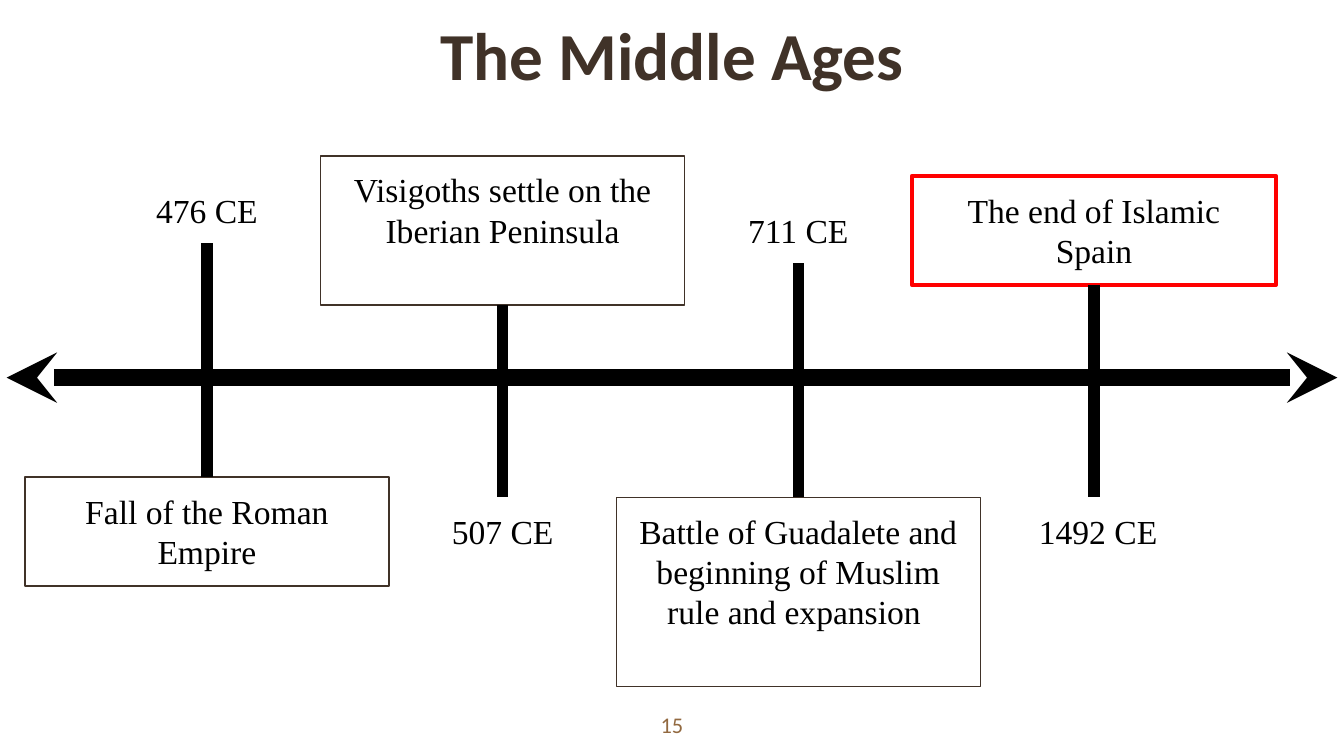
import pptx
import pptx.util
import pptx.dml.color
import pptx.enum.shapes
import pptx.enum.text
import pptx.oxml.ns
from lxml import etree

Inches = pptx.util.Inches
Pt = pptx.util.Pt

COLOURS = {"brown": "403228", "tan": "926940", "black": "000000", "red": "FF0000"}
SERIF = "Times New Roman"
SANS = "Calibri"

FIRST_CENTRE, EVENT_STEP = 1.54, 2.2
EVENT_WIDTH, DATE_HEIGHT = 2.71, 0.5

# date, date top, date width, event, event top, event height, outline, outline width
EVENTS = [
    ("476 CE", 1.31, 1.23, "Fall of the Roman Empire", 3.55, 0.81, "brown", 0.75),
    ("507 CE", 3.7, 1.23, "Visigoths settle on the Iberian Peninsula", 1.16, 1.11, "brown", 0.75),
    ("711 CE", 1.46, 1.23, "Battle of Guadalete and beginning of Muslim rule and expansion ",
     3.7, 1.41, "brown", 0.75),
    (" 1492 CE", 3.7, 1.46, "The end of Islamic Spain", 1.31, 0.81, "red", 2.25),
]


def rgb(name):
    return pptx.dml.color.RGBColor.from_string(COLOURS[name])


def write(shape, text, size, font, colour, bold=False, side_inset=0.1):
    """Fill a shape with one centred paragraph, starting at the top."""
    frame = shape.text_frame
    frame.text = text
    frame.word_wrap = True
    frame.auto_size = pptx.enum.text.MSO_AUTO_SIZE.NONE
    frame.vertical_anchor = pptx.enum.text.MSO_ANCHOR.TOP
    frame.margin_left = frame.margin_right = Inches(side_inset)
    frame.margin_top = frame.margin_bottom = Inches(0.1)
    paragraph = frame.paragraphs[0]
    paragraph.alignment = pptx.enum.text.PP_ALIGN.CENTER
    paragraph.space_before = Pt(0)
    run_font = paragraph.runs[0].font
    run_font.name, run_font.size, run_font.bold = font, Pt(size), bold
    run_font.color.rgb = rgb(colour)


def add_title(slide, text):
    title = slide.shapes.title
    title.left, title.top = Inches(2.3), Inches(0)
    title.width, title.height = Inches(5.4), Inches(0.84)
    write(title, text, 36, SANS, "brown", bold=True)


def add_page_number(slide, number):
    page = slide.shapes.add_textbox(Inches(4.7), Inches(5.19), Inches(0.6), Inches(0.43))
    write(page, number, 12, SANS, "tan")


def add_line(slide, start, end, width):
    line = slide.shapes.add_connector(
        pptx.enum.shapes.MSO_CONNECTOR.STRAIGHT, *map(Inches, start + end))
    line.line.color.rgb = rgb("black")
    line.line.width = Pt(width)
    etree.SubElement(line._element.spPr, pptx.oxml.ns.qn("a:effectLst"))
    return line


def add_time_axis(slide):
    axis = add_line(slide, (0.05, 2.81), (9.95, 2.81), 9)
    outline = axis.line._get_or_add_ln()
    for tag in ("a:headEnd", "a:tailEnd"):
        etree.SubElement(outline, pptx.oxml.ns.qn(tag), type="stealth")


def add_event_box(slide, centre, top, height, text, outline, outline_width):
    box = slide.shapes.add_shape(
        pptx.enum.shapes.MSO_SHAPE.RECTANGLE, Inches(centre - EVENT_WIDTH / 2),
        Inches(top), Inches(EVENT_WIDTH), Inches(height))
    box.shadow.inherit = False
    box.fill.background()
    box.line.color.rgb = rgb(outline)
    box.line.width = Pt(outline_width)
    write(box, text, 18, SERIF, "black", side_inset=0.15)
    return box


def add_date(slide, centre, top, width, text):
    date = slide.shapes.add_textbox(
        Inches(centre - width / 2), Inches(top), Inches(width), Inches(DATE_HEIGHT))
    write(date, text, 18, SERIF, "black")
    return date


def add_stem(slide, upper, lower):
    """Join the bottom of the upper box to the top of the lower one."""
    stem = add_line(slide, (0, 0), (0, 0), 6)
    stem.begin_connect(upper, 2)
    stem.end_connect(lower, 0)


def main():
    presentation = pptx.Presentation()
    presentation.slide_width = Inches(10)
    presentation.slide_height = Inches(10 * 9 / 16)
    slide = presentation.slides.add_slide(presentation.slide_layouts[5])

    add_time_axis(slide)
    add_page_number(slide, "15")
    add_title(slide, "The Middle Ages")
    for index, event in enumerate(EVENTS):
        year, year_top, year_width, text, top, height, outline, outline_width = event
        centre = FIRST_CENTRE + index * EVENT_STEP
        box = add_event_box(slide, centre, top, height, text, outline, outline_width)
        date = add_date(slide, centre, year_top, year_width, year)
        upper, lower = (box, date) if top < year_top else (date, box)
        add_stem(slide, upper, lower)

    presentation.save("out.pptx")


if __name__ == "__main__":
    main()
